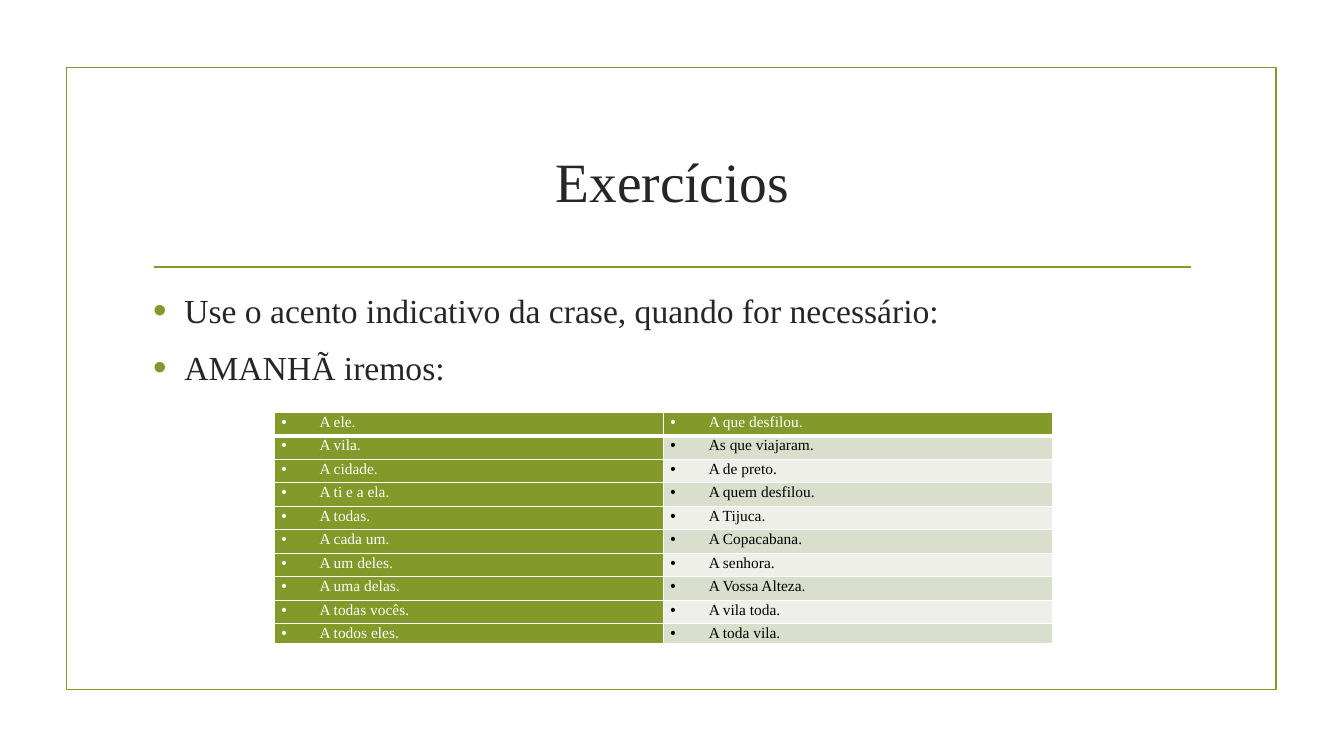
from pptx import Presentation
from pptx import oxml
from pptx import util as u
from pptx.dml.color import RGBColor
from pptx.enum import shapes, text
from pptx.oxml import ns

GREEN = RGBColor(0x83, 0x99, 0x2A)
DARK = RGBColor(0x26, 0x26, 0x26)
WHITE = RGBColor(0xFF, 0xFF, 0xFF)
BLACK = RGBColor(0, 0, 0)
BANDS = RGBColor(0xED, 0xEF, 0xE8), RGBColor(0xD9, 0xDE, 0xCD)

TASKS = ["Use o acento indicativo da crase, quando for necessário:", "AMANHÃ iremos:"]
ROWS = [
    ("A ele.", "A que desfilou."),
    ("A vila.", "As que viajaram."),
    ("A cidade.", "A de preto."),
    ("A ti e a ela.", "A quem desfilou."),
    ("A todas.", "A Tijuca."),
    ("A cada um.", "A Copacabana."),
    ("A um deles.", "A senhora."),
    ("A uma delas.", "A Vossa Alteza."),
    ("A todas vocês.", "A vila toda."),
    ("A todos eles.", "A toda vila."),
]


def node(tag, body="", **attrs):
    pairs = "".join(f' {key}="{val}"' for key, val in attrs.items())
    return oxml.parse_xml(f"<a:{tag} {ns.nsdecls('a')}{pairs}>{body}</a:{tag}>")


def write(para, words, size=24, color=DARK, align=text.PP_ALIGN.LEFT, indent=0,
          dot=None, scale=100, before=0, after=0, lead=1.0):
    para.alignment = align
    para.line_spacing = lead
    para.space_before, para.space_after = u.Pt(before), u.Pt(after)
    if indent:
        props = para._p.get_or_add_pPr()
        props.set("marL", str(u.Inches(indent)))
        props.set("indent", str(-u.Inches(indent)))
        props.append(node("buClr", f'<a:srgbClr val="{dot or color}"/>'))
        props.append(node("buSzPct", val=scale * 1000))
        props.append(node("buFont", typeface="Arial"))
        props.append(node("buChar", char="•"))
    run = para.add_run()
    run.text = words
    run.font.name, run.font.size = "Times New Roman", u.Pt(size)
    run.font.color.rgb = color


class Deck:
    """Holds the line style and the current slide."""

    def __init__(self):
        self.show = Presentation()
        self.show.slide_width, self.show.slide_height = u.Inches(13.33), u.Inches(7.5)
        self.slide = self.show.slides.add_slide(self.show.slide_layouts[6])
        self.shapes = self.slide.shapes
        self.color, self.width = GREEN, u.Pt(1.25)

    def stroke(self, item):
        item.line.color.rgb, item.line.width = self.color, self.width

    def frame(self, *box):
        rect = self.shapes.add_shape(shapes.MSO_SHAPE.RECTANGLE, *map(u.Inches, box))
        rect.shadow.inherit = False
        rect.fill.background()
        self.stroke(rect)

    def rule(self, *ends):
        line = self.shapes.add_connector(shapes.MSO_CONNECTOR.STRAIGHT, *map(u.Inches, ends))
        line._element.spPr.append(node("effectLst"))
        self.stroke(line)

    def text(self, lines, *box, anchor=text.MSO_ANCHOR.TOP, top=0.05, before=0, **style):
        frame = self.shapes.add_textbox(*map(u.Inches, box)).text_frame
        frame.word_wrap, frame.vertical_anchor = True, anchor
        frame.margin_top = u.Inches(top)
        for i, words in enumerate(lines):
            para = frame.add_paragraph() if i else frame.paragraphs[0]
            write(para, words, before=before if i else 0, **style)

    def cell(self, cell, words, fill, color, top, base):
        cell.margin_left = cell.margin_right = u.Inches(0.07)
        cell.margin_top = cell.margin_bottom = 0
        cell.fill.solid()
        cell.fill.fore_color.rgb = fill
        props = cell._tc.get_or_add_tcPr()
        for i, (side, size) in enumerate(zip("LRTB", (1, 1, top, base))):
            paint = f'<a:solidFill><a:srgbClr val="{WHITE}"/></a:solidFill>'
            props.insert(i, node(f"ln{side}", paint, w=u.Pt(size)))
        write(cell.text_frame.paragraphs[0], words, size=11, color=color,
              align=text.PP_ALIGN.JUSTIFY, indent=0.38, lead=1.07)

    def table(self, rows, *box, last):
        grid = self.shapes.add_table(len(rows), len(rows[0]), *map(u.Inches, box)).table
        grid.first_row = grid.horz_banding = False
        step = (box[3] - last) / (len(rows) - 1)
        for r, row in enumerate(rows):
            grid.rows[r].height = u.Inches(step if r < len(rows) - 1 else last)
            for c, words in enumerate(row):
                head = r == 0 or c == 0
                self.cell(grid.cell(r, c), words,
                          GREEN if head else BANDS[r % 2],
                          WHITE if head else BLACK,
                          3 if r == 1 else 1, 3 if r == 0 else 1)


def main():
    deck = Deck()
    deck.frame(0.66, 0.67, 12, 6.17)
    deck.rule(1.53, 2.65, 11.81, 2.65)
    deck.text(["Exercícios"], 1.42, 1.07, 10.5, 1.43, anchor=text.MSO_ANCHOR.MIDDLE,
              size=39.6, align=text.PP_ALIGN.CENTER)
    deck.text(TASKS, 1.42, 2.8, 10.5, 3.63, top=0.08, indent=0.31, dot=GREEN,
              scale=115, before=5.5, after=6)
    deck.table(ROWS, 2.72, 4.09, 7.72, 2.27, last=0.17)
    deck.show.save("out.pptx")


if __name__ == "__main__":
    main()
